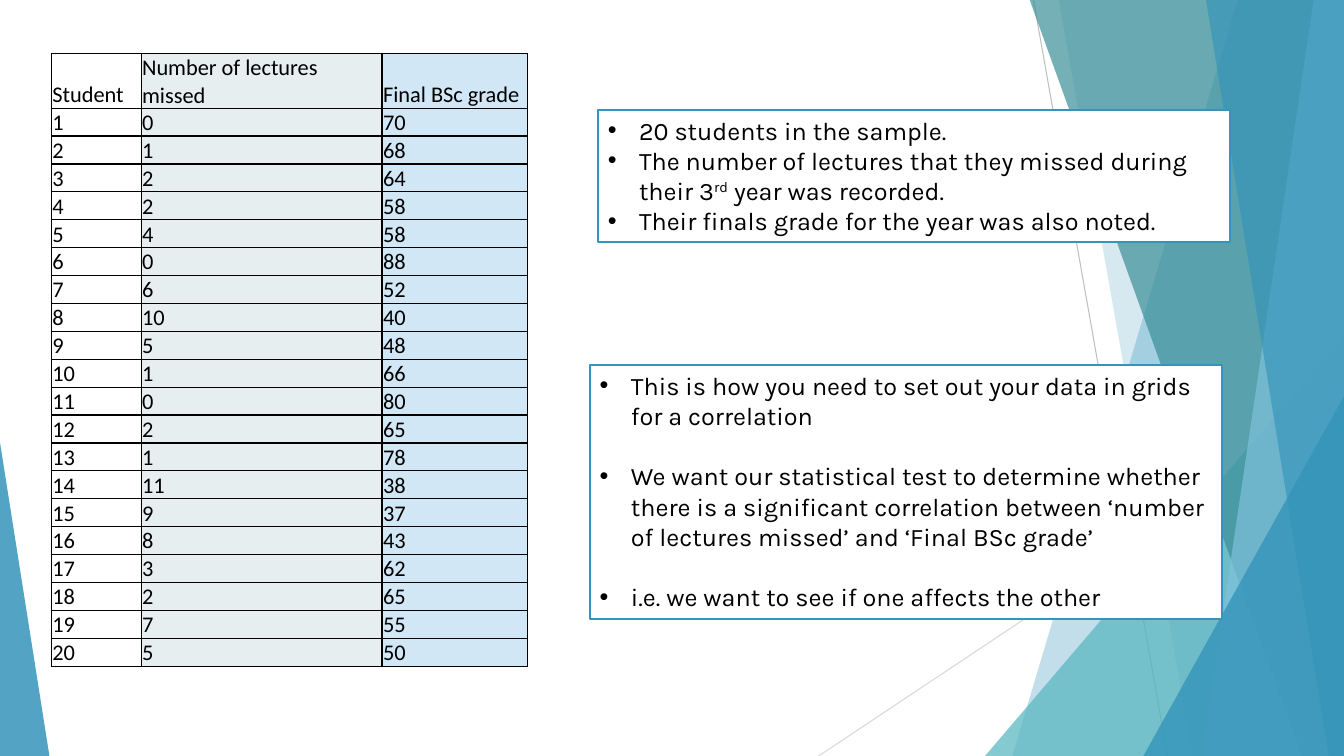
from pptx import Presentation
from pptx.dml.color import RGBColor as RGB
from pptx.enum.shapes import MSO_CONNECTOR as CONN, MSO_SHAPE as SHAPE
from pptx.enum.text import MSO_ANCHOR as ANCHOR, MSO_AUTO_SIZE as AUTO
from pptx.oxml.ns import qn
from pptx.util import Inches, Pt
from lxml.etree import SubElement

HEADERS = ("Student", "Number of lectures missed", "Final BSc grade")
MISSED = (0, 1, 2, 2, 4, 0, 6, 10, 5, 1, 0, 2, 1, 11, 9, 8, 3, 2, 7, 5)
GRADES = (70, 68, 64, 58, 58, 88, 52, 40, 48, 66,
          80, 65, 78, 38, 37, 43, 62, 65, 55, 50)

NOTES = (
    dict(at=(5.85, 3.62, 6.27, 2.52), gap=21.6, bullets=(
        ("This is how you need to set out your data in grids for a correlation",),
        ("We want our statistical test to determine whether there is a significant "
         "correlation between ‘number of lectures missed’ and ‘Final BSc grade’",),
        ("i.e. we want to see if one affects the other",),
    )),
    dict(at=(5.93, 1.09, 6.27, 1.31), gap=0, bullets=(
        ("20 students in the sample.",),
        ("The number of lectures that they missed during their 3", "rd",
         " year was recorded."),
        ("Their finals grade for the year was also noted.",),
    )),
)

THEME = dict(
    accent="3494BA", black="000000", white="FFFFFF",
    columns=(None, "E6EEF0", "D1E7F6"),
    table_font=dict(name="Calibri", size=Pt(16)),
    note_font=dict(name="Karla", size=Pt(18)),
)

WIDTH, HEIGHT, TOP = 13.33, 7.5, -0.01
RAYS = (((10.25, 0), (11.58, HEIGHT), "BFBFBF"),
        ((WIDTH, 4.03), (8.12, HEIGHT), "D9D9D9"))
FACETS = (
    ("band", (12.28, 10.04), "3494BA", 30),
    ("band", (10.5, 11.83), "3494BA", 20),
    ("triangle", (9.77, 3.33, 3.56, 4.17, 1), "58B6C0", 72),
    ("band", (10.21, 12.91), "3A8F98", 70),
    ("band", (13.03, 11.92), "7FC1DB", 70),
    ("band", (11.96, 13.18), "3494BA", 65),
    ("triangle", (11.34, 3.93, 1.99, 3.57, 1), "3494BA", 80),
    ("triangle", (0, 4.39, 0.49, 3.11, 0), "3494BA", 85),
)

TABLE_AT = (0.51, 0.53)
COL_WIDTHS = (0.89, 2.39, 1.44)
HEADER_H, ROW_H = 0.53, 0.27


def set_attrs(target, values):
    for name, value in values.items():
        setattr(target, name, value)


def paint(target, color):
    target.solid()
    target.fore_color.rgb = RGB.from_string(color)


def add_ray(shapes, start, end, color):
    s = shapes.add_connector(CONN.STRAIGHT, *map(Inches, start + end))
    paint(s.line.fill, color)
    s.line.width = Pt(0.75)
    SubElement(s._element.spPr, qn("a:effectLst"))


def add_facet(shapes, kind, geometry, color, opacity):
    if kind == "band":
        top_x, bottom_x = geometry
        outline = shapes.build_freeform(Inches(top_x), Inches(TOP))
        corners = ((WIDTH, TOP), (WIDTH, HEIGHT), (bottom_x, HEIGHT))
        outline.add_line_segments([(Inches(x), Inches(y)) for x, y in corners])
        s = outline.convert_to_shape()
    else:
        *box, apex = geometry
        s = shapes.add_shape(SHAPE.ISOSCELES_TRIANGLE, *map(Inches, box))
        s.adjustments[0] = apex
    s.shadow.inherit = False
    s.line.fill.background()
    paint(s.fill, color)
    clr = s._element.spPr.find(qn("a:solidFill"))[0]
    SubElement(clr, qn("a:alpha"), val=str(opacity * 1000))


def add_run(p, text, font):
    r = p.add_run()
    r.text = text
    set_attrs(r.font, font)
    r.font.color.rgb = RGB.from_string(THEME["black"])
    return r


def add_note(shapes, at, gap, bullets):
    s = shapes.add_textbox(*map(Inches, at))
    paint(s.fill, THEME["white"])
    paint(s.line.fill, THEME["accent"])
    s.line.width = Pt(1.5)
    tf = s.text_frame
    set_attrs(tf, dict(word_wrap=True, auto_size=AUTO.SHAPE_TO_FIT_TEXT))
    for i, parts in enumerate(bullets):
        p = tf.add_paragraph() if i else tf.paragraphs[0]
        p.space_before = Pt(gap if i else 0)
        pPr = p._p.get_or_add_pPr()
        pPr.set("marL", str(Inches(0.31)))
        pPr.set("indent", str(-Inches(0.31)))
        SubElement(pPr, qn("a:buFont"), typeface="Arial")
        SubElement(pPr, qn("a:buChar"), char="•")
        for part in parts:
            r = add_run(p, part, THEME["note_font"])
            if part == "rd":
                r._r.get_or_add_rPr().set("baseline", "30000")


def add_borders(cell):
    tcPr = cell._tc.get_or_add_tcPr()
    for side in ("lnL", "lnR", "lnT", "lnB"):
        ln = SubElement(tcPr, qn(f"a:{side}"), w=str(Pt(1)))
        fill = SubElement(ln, qn("a:solidFill"))
        SubElement(fill, qn("a:srgbClr"), val=THEME["black"])


def add_grades(shapes):
    students = range(1, len(MISSED) + 1)
    rows = [HEADERS, *zip(students, MISSED, GRADES)]
    size = (sum(COL_WIDTHS), HEADER_H + ROW_H * len(MISSED))
    table = shapes.add_table(len(rows), len(HEADERS),
                             *map(Inches, TABLE_AT + size)).table
    set_attrs(table, dict(first_row=False, horz_banding=False))
    for col, width in zip(table.columns, COL_WIDTHS):
        col.width = Inches(width)
    for i, values in enumerate(rows):
        table.rows[i].height = Inches(ROW_H if i else HEADER_H)
        for j, value in enumerate(values):
            cell = table.cell(i, j)
            set_attrs(cell, dict(
                vertical_anchor=ANCHOR.BOTTOM, margin_left=Inches(0.01),
                margin_right=Inches(0.01), margin_top=Inches(0.01), margin_bottom=0))
            add_borders(cell)
            color = THEME["columns"][j]
            if color:
                paint(cell.fill, color)
            else:
                cell.fill.background()
            add_run(cell.text_frame.paragraphs[0], str(value), THEME["table_font"])


def main():
    prs = Presentation()
    set_attrs(prs, dict(slide_width=Inches(WIDTH), slide_height=Inches(HEIGHT)))
    shapes = prs.slides.add_slide(prs.slide_layouts[6]).shapes
    for ray in RAYS:
        add_ray(shapes, *ray)
    for facet in FACETS:
        add_facet(shapes, *facet)
    for note in NOTES:
        add_note(shapes, **note)
    add_grades(shapes)
    prs.save("out.pptx")


if __name__ == "__main__":
    main()
